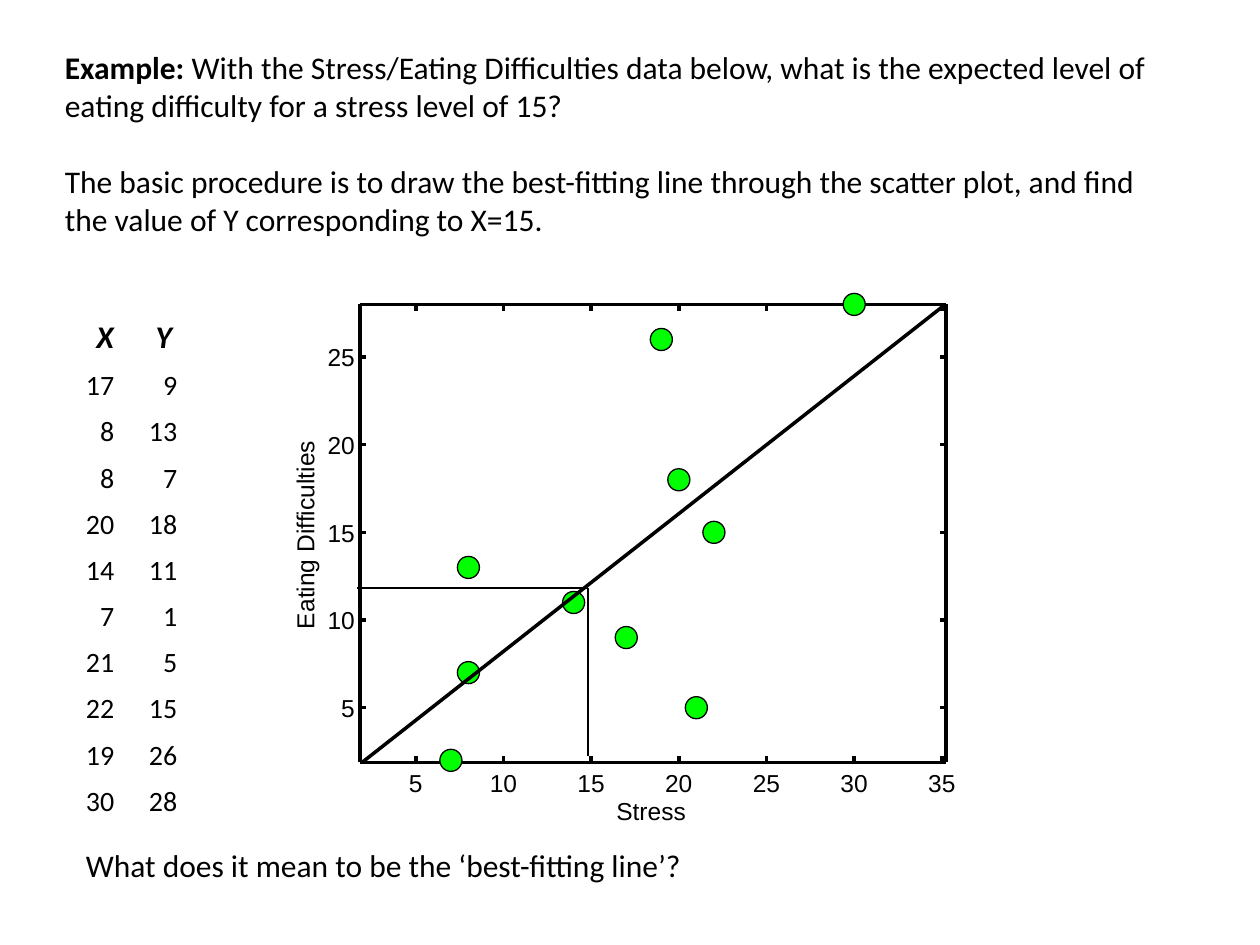
from typing import NamedTuple

from lxml.etree import SubElement
from pptx import Presentation
from pptx.dml.color import RGBColor
from pptx.enum.shapes import MSO_CONNECTOR, MSO_SHAPE
from pptx.enum.text import MSO_ANCHOR, MSO_AUTO_SIZE, PP_ALIGN
from pptx.oxml.ns import qn
from pptx.util import Inches, Pt

BLACK = RGBColor(0x00, 0x00, 0x00)
GREEN = RGBColor(0x00, 0xFF, 0x00)

BODY = {"name": "Calibri", "size": Pt(18), "bold": False}
STRONG = BODY | {"bold": True}
HEADING = STRONG | {"italic": True}
CELL = BODY | {"size": Pt(16)}
AXIS = {"name": "Arial", "size": Pt(14)}
NO_MARGINS = dict.fromkeys(("margin_left", "margin_top", "margin_right", "margin_bottom"), 0)


class Box(NamedTuple):
    """An area in columns and rows of the slide grid."""
    left: float
    top: float
    width: float
    height: float


class Run(NamedTuple):
    text: str
    style: dict


class Observation(NamedTuple):
    stress: int
    eating: int


OBSERVATIONS = [Observation(*pair) for pair in (
    (17, 9), (8, 13), (8, 7), (20, 18), (14, 11),
    (7, 1), (21, 5), (22, 15), (19, 26), (30, 28))]

# Plot frame and scales, in grid units
LEFT, TOP, RIGHT, BOTTOM = 34.3, 29, 90.1, 72.6
UNIT = 1.67
TICK = 0.6
DOT = 2.1
LABEL_HEIGHT = 3.2
LOWEST_PLOTTED = 2  # the smallest value sits on the frame
GUIDE = 56  # column and row where the guides meet the fitted line


def cells(count: float) -> int:
    """The slide is a grid of 120 columns by 90 rows of square cells."""
    return Inches(count / 12)


def stress_column(value: float) -> float:
    return 39.6 + UNIT * (value - 5)


def eating_row(value: float) -> float:
    return 67.4 - UNIT * (value - 5)


def apply(target, values: dict) -> None:
    for name, value in values.items():
        setattr(target, name, value)


def add_run(paragraph, run: Run) -> None:
    text_run = paragraph.add_run()
    text_run.text = run.text
    apply(text_run.font, run.style)
    text_run.font.color.rgb = BLACK


def add_text(slide, box: Box, paragraphs: list[list[Run]], wrap: bool = False,
             margins: dict | None = None):
    shape = slide.shapes.add_textbox(*map(cells, box))
    frame = shape.text_frame
    apply(frame, {"word_wrap": wrap, "auto_size": MSO_AUTO_SIZE.SHAPE_TO_FIT_TEXT,
                  **(margins or {})})
    for index, runs in enumerate(paragraphs):
        paragraph = frame.add_paragraph() if index else frame.paragraphs[0]
        if index:
            paragraph.space_before = Pt(22)
        for run in runs:
            add_run(paragraph, run)
    return shape


def add_label(slide, box: Box, text: str):
    return add_text(slide, box, [[Run(text, AXIS)]], margins=NO_MARGINS)


def add_line(slide, start: tuple, end: tuple, width: float = 0) -> None:
    line = slide.shapes.add_connector(MSO_CONNECTOR.STRAIGHT, *map(cells, (*start, *end)))
    line.line.color.rgb = BLACK
    line.line.width = Pt(width)
    SubElement(line._element.spPr, qn("a:effectLst"))


def add_dot(slide, point: Observation) -> None:
    column = stress_column(point.stress)
    row = eating_row(max(point.eating, LOWEST_PLOTTED))
    box = Box(column - DOT / 2, row - DOT / 2, DOT, DOT)
    dot = slide.shapes.add_shape(MSO_SHAPE.OVAL, *map(cells, box))
    dot.shadow.inherit = False
    dot.fill.solid()
    dot.fill.fore_color.rgb = GREEN
    dot.line.color.rgb = BLACK
    dot.line.width = Pt(0)


def add_data_table(slide, box: Box) -> None:
    table = slide.shapes.add_table(len(OBSERVATIONS), 2, *map(cells, box)).table
    apply(table, {"first_row": False, "horz_banding": False})
    for row, point in zip(table.rows, OBSERVATIONS):
        for cell, value in zip(row.cells, point):
            cell.fill.background()
            inset = Inches(0.01)
            apply(cell, {"margin_left": inset, "margin_top": inset, "margin_right": inset,
                         "margin_bottom": 0, "vertical_anchor": MSO_ANCHOR.BOTTOM})
            paragraph = cell.text_frame.paragraphs[0]
            paragraph.alignment = PP_ALIGN.RIGHT
            add_run(paragraph, Run(str(value), CELL))


def add_table_heading(slide, box: Box) -> None:
    shape = add_text(slide, box, [[]], wrap=True, margins={"margin_right": 0})
    paragraph = shape.text_frame.paragraphs[0]
    tabs = SubElement(paragraph._p.get_or_add_pPr(), qn("a:tabLst"))
    SubElement(tabs, qn("a:tab"), pos=str(Inches(0.47)), algn="l")
    add_run(paragraph, Run("X\tY", HEADING))


def label_width(text: str) -> float:
    return 1.2 + 1.3 * len(text)


def add_axes(slide) -> None:
    # Ticks on both sides of the frame, numbers below and on the left
    for value in range(5, 36, 5):
        column, text = stress_column(value), str(value)
        add_line(slide, (column, BOTTOM), (column, BOTTOM - TICK))
        add_line(slide, (column, TOP), (column, TOP + TICK))
        add_label(slide, Box(column - 0.65 * len(text), 73.1, label_width(text), LABEL_HEIGHT), text)
    for value in range(5, 26, 5):
        row, text = eating_row(value), str(value)
        add_line(slide, (LEFT, row), (LEFT + TICK, row))
        add_line(slide, (RIGHT, row), (RIGHT - TICK, row))
        width = label_width(text)
        add_label(slide, Box(35 - width, row - 1.4, width, LABEL_HEIGHT), text)
    # Frame
    for row in (TOP, BOTTOM):
        add_line(slide, (LEFT, row), (RIGHT, row))
    for column in (LEFT, RIGHT):
        add_line(slide, (column, BOTTOM), (column, TOP))


def main() -> None:
    presentation = Presentation()
    presentation.slide_width, presentation.slide_height = cells(120), cells(90)
    slide = presentation.slides.add_slide(presentation.slide_layouts[6])

    # Question and procedure
    add_text(slide, Box(5, 4, 109, 19.4), [
        [Run("Example: ", STRONG),
         Run("With the Stress/Eating Difficulties data below, what is the expected level of "
             "eating difficulty for a stress level of 15?", BODY)],
        [Run("The basic procedure is to draw the best-fitting line through the scatter plot, "
             "and find the value of Y corresponding to X=15.", BODY)],
    ], wrap=True)
    add_text(slide, Box(7, 80, 60, 4.8),
             [[Run("What does it mean to be the ‘best-fitting line’?", BODY)]])

    # Data
    add_data_table(slide, Box(5, 34, 12, 44))
    add_table_heading(slide, Box(8, 29.6, 9.8, 4.8))

    # Scatter plot
    add_axes(slide)
    for point in OBSERVATIONS:
        add_dot(slide, point)
    add_label(slide, Box(58.7, 75.8, 8.3, LABEL_HEIGHT), "Stress")
    add_label(slide, Box(19, 48.1, 20.4, LABEL_HEIGHT), "Eating Difficulties").rotation = 270

    # Fitted line and the reading at a stress level of 15
    add_line(slide, (34.5, BOTTOM), (89.9, 29.1))
    add_line(slide, (GUIDE, 72), (GUIDE, GUIDE), 0.75)
    add_line(slide, (34, GUIDE), (GUIDE, GUIDE), 0.75)

    presentation.save("out.pptx")


if __name__ == "__main__":
    main()
